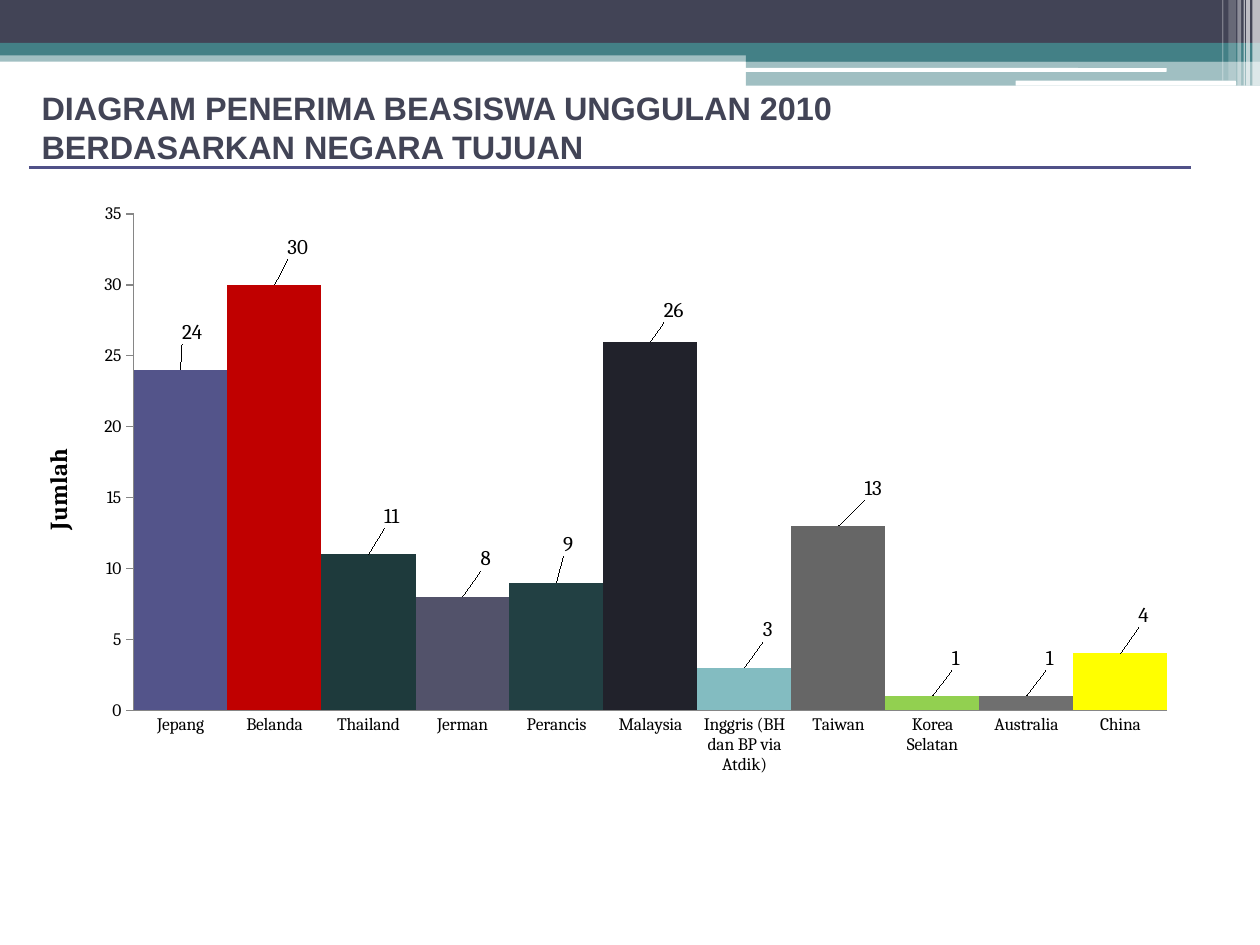
from typing import NamedTuple

from lxml import etree
from pptx import Presentation
from pptx import util as u
from pptx.chart.data import CategoryChartData
from pptx.dml.color import RGBColor
from pptx.enum import chart as ch, shapes, text
from pptx.oxml import parse_xml
from pptx.oxml.ns import nsdecls, qn

PX = 9144  # EMU per px, 100 px to the inch


class Band(NamedTuple):
    left: int
    top: int
    width: int
    height: int
    color: str
    opacity: int = 100
    rounded: bool = False


class Country(NamedTuple):
    name: str
    grants: int
    color: str
    label_dx: float  # label shift as a share of the chart size
    label_dy: float


BANDS = [
    Band(0, 40, 1000, 9, "438086", 50),
    Band(0, 0, 1000, 34, "424456"),
    Band(0, 34, 1000, 10, "438086"),
    Band(592, 39, 408, 10, "438086"),
    Band(592, 48, 408, 20, "438086", 50),
    Band(591, 54, 335, 3, "FFFFFF", rounded=True),
    Band(806, 64, 175, 4, "FFFFFF", rounded=True),
    Band(994, 0, 6, 68, "FFFFFF", 65),
    Band(989, 0, 3, 68, "FFFFFF", 65),
    Band(987, 0, 1, 68, "FFFFFF", 60),
    Band(982, 0, 3, 68, "FFFFFF", 40),
    Band(975, 0, 6, 64, "FFFFFF", 20),
    Band(970, 0, 1, 64, "FFFFFF", 30),
]

COUNTRIES = [
    Country("Jepang", 24, "53548A", 0.01, -0.03),
    Country("Belanda", 30, "C00000", 0.02, -0.03),
    Country("Thailand", 11, "1E3A3C", 0.02, -0.03),
    Country("Jerman", 8, "52526A", 0.02, -0.03),
    Country("Perancis", 9, "224043", 0.01, -0.03),
    Country("Malaysia", 26, "21222B", 0.02, -0.02),
    Country("Inggris (BH dan BP via Atdik)", 3, "83BCC1", 0.02, -0.03),
    Country("Taiwan", 13, "666666", 0.03, -0.03),
    Country("Korea Selatan", 1, "92D050", 0.02, -0.03),
    Country("Australia", 1, "6F6F6F", 0.02, -0.03),
    Country("China", 4, "FFFF00", 0.02, -0.03),
]


def px(*lengths: int) -> list[u.Emu]:
    return [u.Emu(length * PX) for length in lengths]


def rgb(color: str) -> RGBColor:
    return RGBColor.from_string(color)


def style_font(font, size: float, name: str, color: str, bold: bool) -> None:
    font.size, font.name, font.bold = u.Pt(size), name, bold
    font.color.rgb = rgb(color)


def draw_band(page, band: Band) -> None:
    kind = shapes.MSO_SHAPE.ROUNDED_RECTANGLE if band.rounded else shapes.MSO_SHAPE.RECTANGLE
    shape = page.shapes.add_shape(kind, *px(*band[:4]))
    shape.shadow.inherit = False
    shape.line.fill.background()
    shape.fill.solid()
    shape.fill.fore_color.rgb = rgb(band.color)
    if band.opacity < 100:
        tone = shape.fill._xPr.find(".//" + qn("a:srgbClr"))
        etree.SubElement(tone, qn("a:alpha"), val=str(band.opacity * 1000))


def draw_title(page, lines: list[str]) -> None:
    title = page.shapes.title
    title.left, title.top, title.width, title.height = px(23, 70, 812, 62)
    frame = title.text_frame
    frame.text = "\n".join(lines)
    frame.auto_size = text.MSO_AUTO_SIZE.NONE
    frame.vertical_anchor = text.MSO_ANCHOR.MIDDLE
    for para in frame.paragraphs:
        para.alignment = text.PP_ALIGN.LEFT
        for span in para.runs:
            style_font(span.font, 18.5, "Arial", "424456", True)


def draw_rule(page) -> None:
    rule = page.shapes.add_connector(shapes.MSO_CONNECTOR.STRAIGHT, *px(23, 133, 945, 133))
    rule.line.color.rgb = rgb("505188")
    rule.line.width = u.Pt(1.25)
    etree.SubElement(rule._element.spPr, qn("a:effectLst"))


def manual_layout(inner: str):
    return parse_xml(f"<c:layout {nsdecls('c')}><c:manualLayout>{inner}</c:manualLayout></c:layout>")


def style_axes(chart) -> None:
    for axis in (chart.category_axis, chart.value_axis):
        axis.has_major_gridlines = False
        axis.format.line.color.rgb = rgb("868686")
        axis.major_tick_mark = ch.XL_TICK_MARK.NONE
    values = chart.value_axis
    values.major_tick_mark = ch.XL_TICK_MARK.OUTSIDE
    values.minimum_scale, values.maximum_scale, values.major_unit = 0, 35, 5
    values.axis_title.text_frame.text = "Jumlah"
    span = values.axis_title.text_frame.paragraphs[0].runs[0]
    style_font(span.font, 14, "Cambria", "000000", True)


def style_points(series) -> None:
    for index, country in enumerate(COUNTRIES):
        point = series.points[index]
        point.format.fill.solid()
        point.format.fill.fore_color.rgb = rgb(country.color)
        label = point.data_label
        style_font(label.font, 12, "Cambria", "000000", False)
        label.position = ch.XL_LABEL_POSITION.OUTSIDE_END
        # Shift the label from its usual place above the bar
        shift = f'<c:x val="{country.label_dx}"/><c:y val="{country.label_dy}"/>'
        series._element.findall(".//" + qn("c:dLbl"))[index].find(qn("c:idx")).addnext(
            manual_layout(shift))


def draw_chart(page) -> None:
    data = CategoryChartData()
    data.categories = [country.name for country in COUNTRIES]
    data.add_series("Series 1", [country.grants for country in COUNTRIES])
    chart = page.shapes.add_chart(
        ch.XL_CHART_TYPE.COLUMN_CLUSTERED, *px(23, 148, 922, 547), data).chart
    chart.has_legend = chart.has_title = False
    style_font(chart.font, 10, "Cambria", "000000", False)
    plot = chart.plots[0]
    plot.gap_width = 0
    plot.vary_by_categories = False
    style_axes(chart)
    style_points(plot.series[0])

    # Fixed inner plot area
    area = chart._chartSpace.find(".//" + qn("c:plotArea"))
    for old in area.findall(qn("c:layout")):
        area.remove(old)
    area.insert(0, manual_layout(
        '<c:layoutTarget val="inner"/><c:xMode val="edge"/><c:yMode val="edge"/>'
        '<c:x val="0.09"/><c:y val="0.04"/><c:w val="0.89"/><c:h val="0.72"/>'))


def main() -> None:
    deck = Presentation()
    deck.slide_width, deck.slide_height = px(1000, 750)
    page = deck.slides.add_slide(deck.slide_layouts.get_by_name("Title Only"))
    for band in BANDS:
        draw_band(page, band)
    draw_title(page, ["DIAGRAM PENERIMA BEASISWA UNGGULAN 2010",
                      "BERDASARKAN NEGARA TUJUAN"])
    draw_rule(page)
    draw_chart(page)
    deck.save("out.pptx")


if __name__ == "__main__":
    main()
